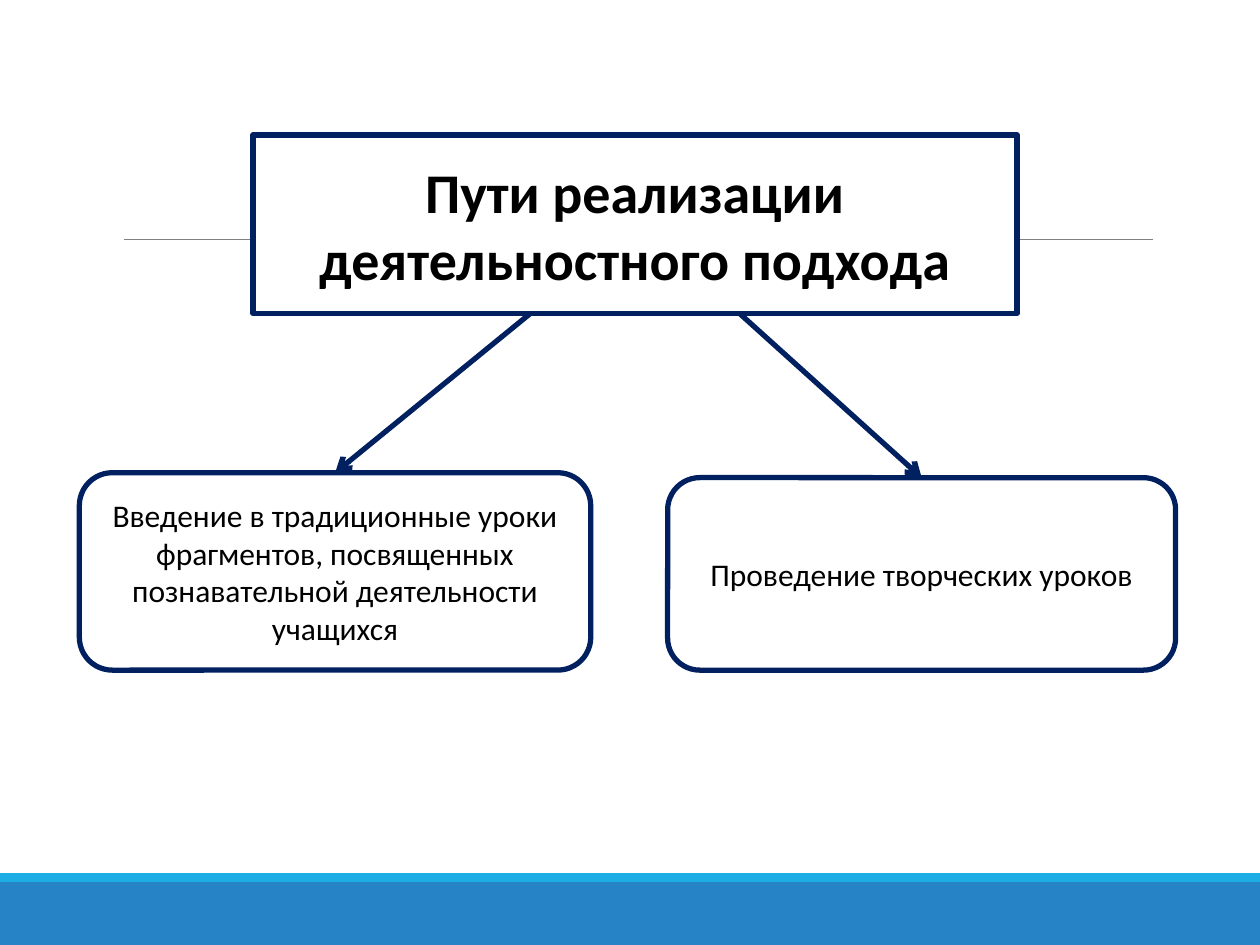
"""Build a slide showing two ways to put the activity approach into practice."""
from lxml.etree import SubElement
from pptx import Presentation
from pptx.dml.color import RGBColor
from pptx.enum.shapes import MSO_CONNECTOR as Connector, MSO_SHAPE as Shape
from pptx.enum.text import MSO_ANCHOR as Anchor, MSO_AUTO_SIZE as AutoSize, PP_ALIGN as Align
from pptx.oxml import parse_xml
from pptx.oxml.ns import qn
from pptx.util import Cm, Pt

NAVY = RGBColor(0x00, 0x20, 0x60)
BLUE = RGBColor(0x26, 0x83, 0xC6)
CYAN = RGBColor(0x1C, 0xAD, 0xE4)
GRAY = RGBColor(0x80, 0x80, 0x80)
WHITE = RGBColor(0xFF, 0xFF, 0xFF)
BLACK = RGBColor(0x00, 0x00, 0x00)
ROUNDED = (
    '<a:prstGeom xmlns:a="http://schemas.openxmlformats.org/drawingml/2006/main" '
    'prst="roundRect"><a:avLst/></a:prstGeom>'
)


def write_box(shape, text, size=18, bold=False):
    shape.fill.solid()
    shape.fill.fore_color.rgb = WHITE
    shape.line.color.rgb = NAVY
    shape.line.width = Pt(3)
    frame = shape.text_frame
    frame.word_wrap = True
    frame.auto_size = AutoSize.NONE
    frame.vertical_anchor = Anchor.MIDDLE
    paragraph = frame.paragraphs[0]
    paragraph.alignment = Align.CENTER
    run = paragraph.add_run()
    run.text = text
    run.font.name = "Calibri"
    run.font.size = Pt(size)
    run.font.bold = bold
    run.font.color.rgb = BLACK


def draw_line(shapes, start, end, color, width, arrow=False):
    connector = shapes.add_connector(
        Connector.STRAIGHT, *(Cm(value) for value in start + end)
    )
    connector.line.color.rgb = color
    connector.line.width = Pt(width)
    if arrow:
        SubElement(connector.line._get_or_add_ln(), qn("a:tailEnd"), type="arrow")
    SubElement(connector.element.spPr, qn("a:effectLst"))


presentation = Presentation()
presentation.slide_width = Cm(25.4)
presentation.slide_height = Cm(19.05)
slide = presentation.slides.add_slide(presentation.slide_layouts[5])
shapes = slide.shapes
title = shapes.title

for top, height, color in [(17.78, 1.27, BLUE), (17.6, 0.18, CYAN)]:
    band = shapes.add_shape(Shape.RECTANGLE, 0, Cm(top), Cm(25.4), Cm(height))
    band.shadow.inherit = False
    band.fill.solid()
    band.fill.fore_color.rgb = color
    band.line.fill.background()

draw_line(shapes, (2.49, 4.83), (23.24, 4.83), GRAY, 0.5)

title.left, title.top, title.width, title.height = Cm(5.1), Cm(2.72), Cm(15.4), Cm(3.6)
title.element.spPr.append(parse_xml(ROUNDED))
write_box(title, "Пути реализации деятельностного подхода", size=32, bold=True)
shapes.element.append(title.element)

branches = [
    ("Проведение творческих уроков", 13.46, 9.63, 10.24, 3.88, 14.91),
    (
        "Введение в традиционные уроки фрагментов, посвященных "
        "познавательной деятельности учащихся",
        1.6, 9.53, 10.31, 3.98, 10.69,
    ),
]
for text, left, top, width, height, arrow_start in branches:
    box = shapes.add_shape(
        Shape.ROUNDED_RECTANGLE, Cm(left), Cm(top), Cm(width), Cm(height)
    )
    box.shadow.inherit = False
    write_box(box, text)
    draw_line(
        shapes, (arrow_start, 6.32), (left + width / 2, top), NAVY, 3, arrow=True
    )

presentation.save("out.pptx")
